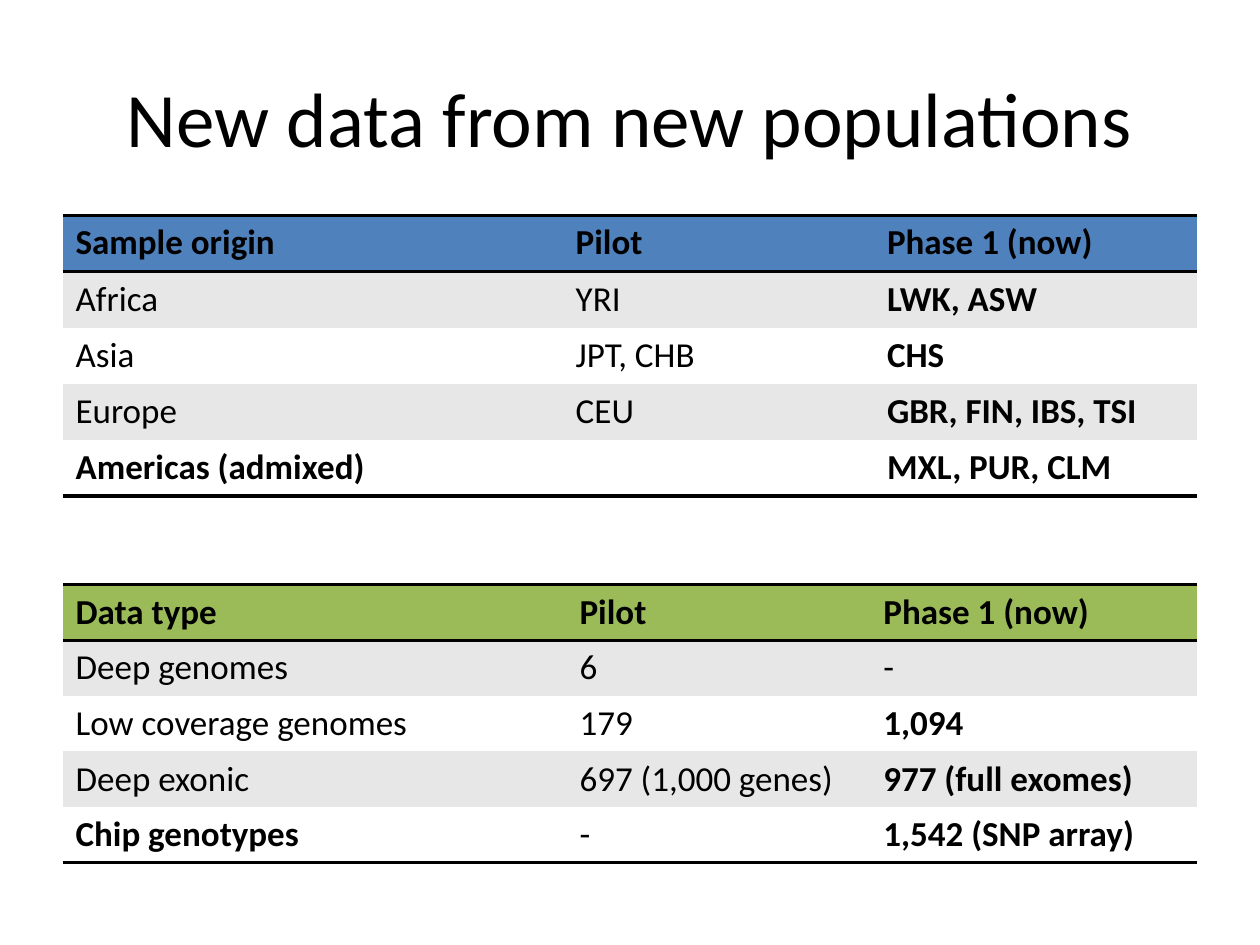
import dataclasses

import lxml.etree
import pptx
import pptx.dml.color
import pptx.enum.text
import pptx.oxml.ns
import pptx.util


@dataclasses.dataclass(frozen=True)
class Theme:
    """Colours, font and type sizes of the slide."""
    font: str = "Calibri"
    title_size: int = 44
    table_size: int = 20
    text: str = "000000"
    blue: str = "4F81BD"
    green: str = "9BBB59"
    bands: tuple = ("FFFFFF", "E7E7E7")
    rule_width: int = 2


THEME = Theme()
NO_STYLE = "{2D5ABB26-0587-4C30-8999-92F81FD0307C}"
SAMPLES = [
    ("Sample origin", "Pilot", "Phase 1 (now)"),
    ("Africa", "YRI", "LWK, ASW"),
    ("Asia", "JPT, CHB", "CHS"),
    ("Europe", "CEU", "GBR, FIN, IBS, TSI"),
    ("Americas (admixed)", "", "MXL, PUR, CLM"),
]
DATA_TYPES = [
    ("Data type", "Pilot", "Phase 1 (now)"),
    ("Deep genomes", "6", "-"),
    ("Low coverage genomes", "179", "1,094"),
    ("Deep exonic", "697 (1,000 genes)", "977 (full exomes)"),
    ("Chip genotypes", "-", "1,542 (SNP array)"),
]


def points(*lengths):
    """Convert numbers to point lengths."""
    return [pptx.util.Pt(length) for length in lengths]


def format_text(paragraph, size, bold=False):
    """Apply the theme font to every run of a paragraph."""
    for span in paragraph.runs:
        span.font.name = THEME.font
        span.font.size = pptx.util.Pt(size)
        span.font.bold = bold
        span.font.color.rgb = pptx.dml.color.RGBColor.from_string(THEME.text)


def add_title(page, text):
    """Add the centred slide title."""
    box = page.shapes.add_textbox(*points(36, 21.6, 648, 90))
    frame = box.text_frame
    frame.word_wrap = True
    frame.vertical_anchor = pptx.enum.text.MSO_ANCHOR.MIDDLE
    frame.text = text
    paragraph = frame.paragraphs[0]
    paragraph.alignment = pptx.enum.text.PP_ALIGN.CENTER
    format_text(paragraph, THEME.title_size)


def add_rule(cell, side):
    """Draw a border on the named side of a cell."""
    qualify = pptx.oxml.ns.qn
    properties = cell._tc.get_or_add_tcPr()
    line = lxml.etree.SubElement(properties, qualify(f"a:ln{side}"))
    line.set("w", str(pptx.util.Pt(THEME.rule_width)))
    fill = lxml.etree.SubElement(line, qualify("a:solidFill"))
    lxml.etree.SubElement(fill, qualify("a:srgbClr")).set("val", THEME.text)


def fill_cell(cell, text, colour, bold, sides, anchor):
    """Set the text, borders and fill of a cell."""
    cell.text = text
    cell.vertical_anchor = anchor
    format_text(cell.text_frame.paragraphs[0], THEME.table_size, bold)
    for side in sides:
        add_rule(cell, side)
    cell.fill.solid()
    cell.fill.fore_color.rgb = pptx.dml.color.RGBColor.from_string(colour)


def add_data_table(page, rows, top, row_height, widths, header_colour, anchor):
    """Add a banded table with rules around its header and at its foot."""
    last = len(rows) - 1
    frame = page.shapes.add_table(
        len(rows), len(widths),
        *points(36, top, sum(widths), row_height * len(rows)))
    table = frame.table
    table._tbl.tblPr.find(pptx.oxml.ns.qn("a:tableStyleId")).text = NO_STYLE
    for column, width in zip(table.columns, widths):
        column.width = pptx.util.Pt(width)
    for row_index, values in enumerate(rows):
        table.rows[row_index].height = pptx.util.Pt(row_height)
        header = row_index == 0
        colour = header_colour if header else THEME.bands[row_index % 2]
        sides = "TB" if header else "B" if row_index == last else ""
        for column_index, text in enumerate(values):
            new_row = column_index == 0 and row_index == last
            new_value = column_index == 2 and text != "-"
            fill_cell(table.cell(row_index, column_index), text, colour,
                      header or new_row or new_value, sides, anchor)


def main():
    """Build and save the slide."""
    deck = pptx.Presentation()
    deck.slide_width, deck.slide_height = points(720, 540)
    page = deck.slides.add_slide(deck.slide_layouts[6])
    anchors = pptx.enum.text.MSO_ANCHOR
    add_title(page, "New data from new populations")
    add_data_table(page, DATA_TYPES, 334, 31.8, (288, 173.6, 186.4),
                   THEME.green, anchors.MIDDLE)
    add_data_table(page, SAMPLES, 123, 32.1, (285.8, 177.9, 184.3),
                   THEME.blue, anchors.TOP)
    deck.save("out.pptx")


if __name__ == "__main__":
    main()
